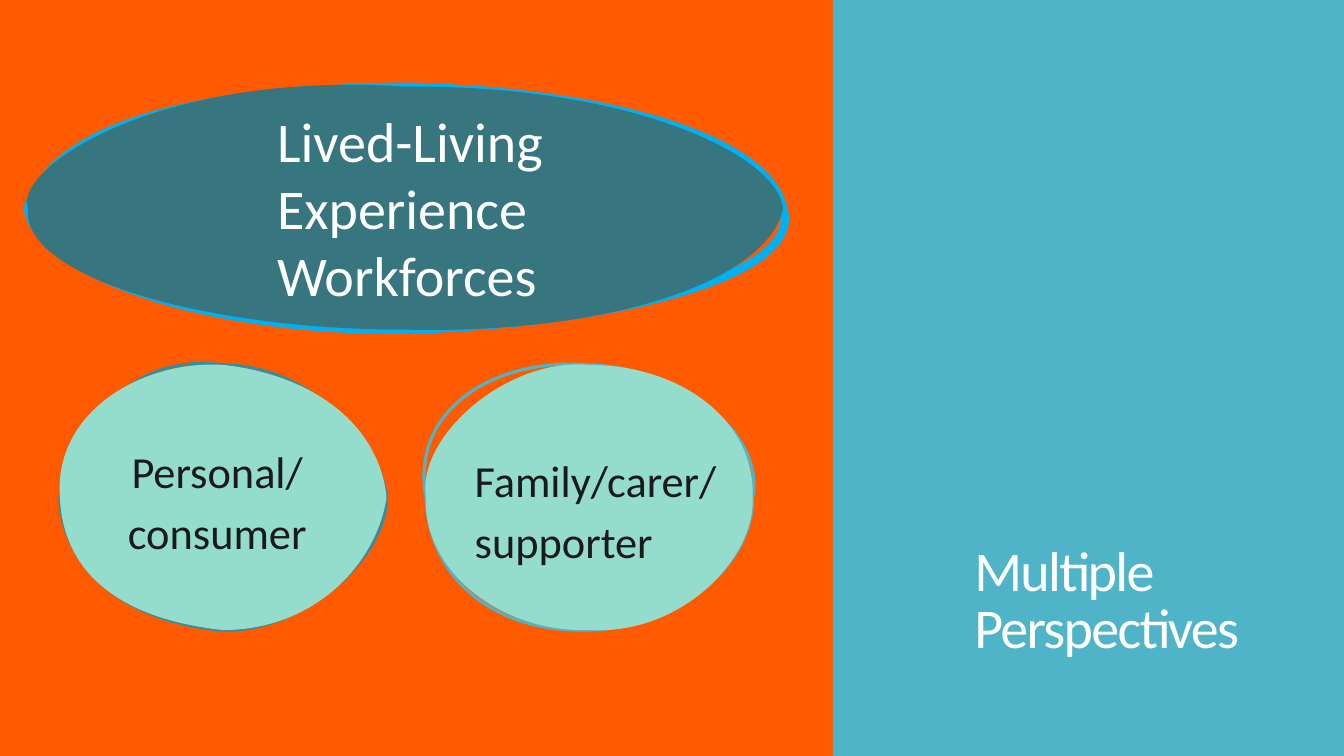
from lxml.etree import SubElement
from pptx import Presentation
from pptx.dml.color import RGBColor
from pptx.enum.shapes import MSO_SHAPE
from pptx.enum.text import MSO_ANCHOR, MSO_AUTO_SIZE, PP_ALIGN
from pptx.oxml.ns import qn
from pptx.util import Inches, Pt

SLIDE_W, SLIDE_H = Inches(13.33), Inches(7.5)
SIDES = [(0, 50), (50, 0), (100, 50), (50, 100)]
WORKFORCE_RIM = [(4, 11), (27, 1), (78, 2), (98, 22),
                 (103, 79), (76, 98), (22, 101), (1, 75)]
WORKFORCE_BODY = [(-2, 34), (17, -7), (79, -1), (99, 27),
                  (98, 80), (77, 102), (23, 100), (-1, 78)]
PERSONAL_RIM = [(5, 27), (19, -5), (76, 0), (98, 29),
                (100, 73), (74, 101), (20, 97), (1, 77)]
PERSONAL_BODY = [(-2, 17), (26, -2), (79, 4), (98, 24),
                 (97, 75), (78, 100), (19, 96), (1, 79)]
FAMILY_RIM = [(-5, 17), (21, -3), (78, 1), (104, 26),
              (100, 76), (77, 99), (21, 101), (1, 81)]
FAMILY_BODY = [(-3, 27), (25, -3), (78, 0), (101, 21),
               (101, 72), (79, 102), (22, 101), (-1, 77)]


def color(hex_code):
    """Turn a hex string into a colour."""
    return RGBColor.from_string(hex_code)


def place(box):
    """Turn a box in percent of the slide into lengths."""
    return [round(share * size / 100)
            for share, size in zip(box, (SLIDE_W, SLIDE_H) * 2)]


def paint(fill, hex_code):
    """Fill with one solid colour."""
    fill.solid()
    fill.fore_color.rgb = color(hex_code)


def add_points(parent, tag, points):
    """Append one drawing command with its points."""
    command = SubElement(parent, qn(tag))
    for x, y in points:
        SubElement(command, qn("a:pt"), x=str(x), y=str(y))


def add_curve(outlines, controls, **flags):
    """Append a closed curve through the four side middles."""
    curve = SubElement(outlines, qn("a:path"), w="100", h="100", **flags)
    add_points(curve, "a:moveTo", SIDES[:1])
    for i in range(4):
        add_points(curve, "a:cubicBezTo",
                   [*controls[2 * i:2 * i + 2], SIDES[(i + 1) % 4]])
    SubElement(curve, qn("a:close"))


def add_oval(s, box, rim, body, fill, line, width):
    """Add a hand-drawn oval with a loose rim and a filled body."""
    x, y, w, h = place(box)
    corners = [(x + w * px // 100, y + h * py // 100) for px, py in SIDES]
    builder = s.shapes.build_freeform(*corners[0])
    builder.add_line_segments(corners[1:], close=True)
    sp = builder.convert_to_shape()
    sp.shadow.inherit = False
    paint(sp.fill, fill)
    sp.line.color.rgb = color(line)
    sp.line.width = Pt(width)
    outlines = next(sp._element.iter(qn("a:pathLst")))
    outlines.clear()
    add_curve(outlines, rim, fill="none")
    add_curve(outlines, body, stroke="0")


def add_panel(s, box, fill):
    """Add a plain coloured panel."""
    sp = s.shapes.add_shape(MSO_SHAPE.RECTANGLE, *place(box))
    sp.shadow.inherit = False
    paint(sp.fill, fill)
    sp.line.fill.background()


def write(tf, lines, size, hex_code, align=PP_ALIGN.LEFT, after=0):
    """Write one paragraph for each line."""
    tf.word_wrap = True
    for i, line in enumerate(lines):
        p = tf.add_paragraph() if i else tf.paragraphs[0]
        p.alignment = align
        p.space_after = Pt(after)
        r = p.add_run()
        r.text = line
        r.font.name = "Calibri"
        r.font.size = Pt(size)
        r.font.color.rgb = color(hex_code)


def add_label(s, box, *args, **kwargs):
    """Add a text box that grows with its text."""
    tf = s.shapes.add_textbox(*place(box)).text_frame
    write(tf, *args, **kwargs)
    tf.auto_size = MSO_AUTO_SIZE.SHAPE_TO_FIT_TEXT


def set_title(s, box, text):
    """Place the title in front and format it."""
    sp = s.shapes.title
    s.shapes._spTree.append(sp._element)
    sp.left, sp.top, sp.width, sp.height = place(box)
    tf = sp.text_frame
    write(tf, [text], 40, "FFFFFF", after=6)
    tf.auto_size = MSO_AUTO_SIZE.NONE
    tf.vertical_anchor = MSO_ANCHOR.MIDDLE
    p = tf.paragraphs[0]
    p.line_spacing = 0.85
    p.runs[0]._r.get_or_add_rPr().set("spc", "-120")


def main():
    """Build and save the slide."""
    prs = Presentation()
    prs.slide_width, prs.slide_height = SLIDE_W, SLIDE_H
    s = prs.slides.add_slide(prs.slide_layouts.get_by_name("Title Only"))
    paint(s.background.fill, "FF5A00")
    add_panel(s, (61.97, 0, 38.03, 100), "50B4C8")
    set_title(s, (71.74, 58.53, 25.73, 42.53), "Multiple Perspectives")
    add_oval(s, (31.7, 48.27, 24.3, 35.07), FAMILY_RIM, FAMILY_BODY,
             "94DDCC", "50B4C8", 2.25)
    add_oval(s, (4.46, 48.27, 24.3, 35.07), PERSONAL_RIM, PERSONAL_BODY,
             "94DDCC", "328EA0", 2.25)
    add_label(s, (6.9, 58.05, 18.53, 16.67), ["Personal/", "consumer"],
              31.7, "1A1A1A", PP_ALIGN.CENTER, after=6)
    add_label(s, (34.58, 59.25, 20.63, 16.67), ["Family/carer/", "supporter"],
              31.7, "1A1A1A", after=6)
    add_oval(s, (2.08, 11.47, 56.19, 32.13), WORKFORCE_RIM, WORKFORCE_BODY,
             "37757F", "00B0F0", 6)
    add_label(s, (19.88, 13.43, 34.28, 28.27),
              ["Lived-Living Experience Workforces"], 40, "FFFFFF")
    prs.save("out.pptx")


if __name__ == "__main__":
    main()
